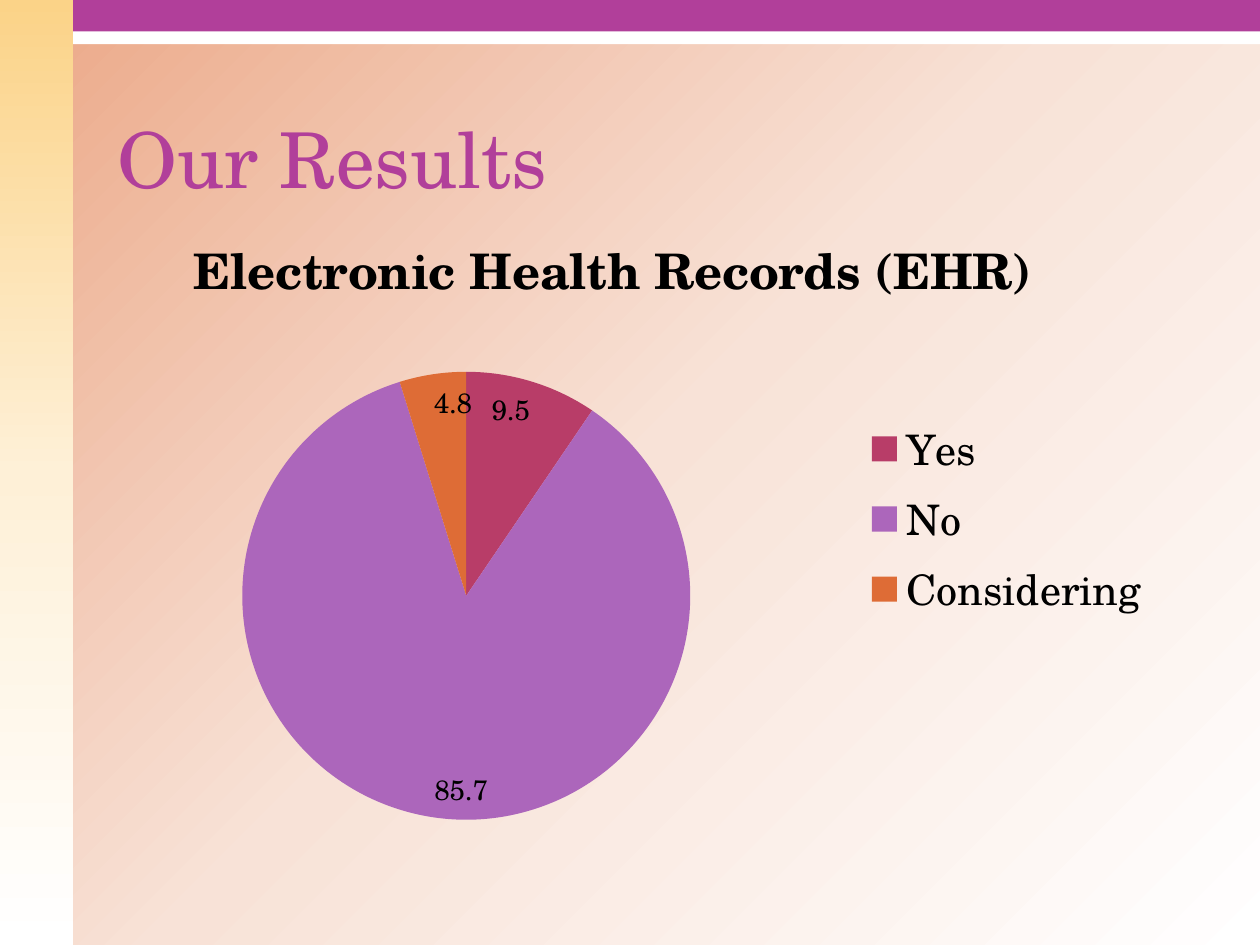
from copy import deepcopy

from lxml import etree
from pptx import Presentation
from pptx import util as u
from pptx.chart.data import CategoryChartData
from pptx.dml.color import RGBColor
from pptx.enum import chart as chart_enum, shapes, text
from pptx.oxml.ns import qn

FONT = "TeX Gyre Schola"
MAGENTA = "B13F9A"
SIDEBAR = 0.58


def color(value):
    return RGBColor.from_string(value)


def format_font(font, size, value, bold=False):
    font.name = FONT
    font.size = u.Pt(size)
    font.bold = bold
    font.color.rgb = color(value)


def fill_gradient(fill, element, colors, clockwise_angle):
    """Spread the colours evenly over a linear gradient inside element."""
    fill.gradient()
    fill.gradient_angle = 360 - clockwise_angle
    stop_list = next(element.iter(qn("a:gsLst")))
    while len(stop_list) < len(colors):
        stop_list.append(deepcopy(stop_list[0]))
    for index, (stop, value) in enumerate(zip(fill.gradient_stops, colors)):
        stop.color.rgb = color(value)
        stop.position = index / (len(colors) - 1)


def add_band(slide, left, top, width, height, colors):
    band = slide.shapes.add_shape(
        shapes.MSO_SHAPE.RECTANGLE,
        u.Inches(left), u.Inches(top), u.Inches(width), u.Inches(height))
    band.shadow.inherit = False
    band.line.fill.background()
    if len(colors) > 1:
        fill_gradient(band.fill, band._element, colors, 90)
    else:
        band.fill.solid()
        band.fill.fore_color.rgb = color(colors[0])


def set_title(slide, wording):
    title = slide.shapes.title
    title.left, title.top = u.Inches(0.83), u.Inches(0.42)
    title.width, title.height = u.Inches(8.75), u.Inches(1.25)
    frame = title.text_frame
    frame.text = wording
    frame.auto_size = text.MSO_AUTO_SIZE.NONE
    frame.vertical_anchor = text.MSO_ANCHOR.BOTTOM
    paragraph = frame.paragraphs[0]
    paragraph.alignment = text.PP_ALIGN.LEFT
    format_font(paragraph.runs[0].font, 44, MAGENTA)


def place_plot(chart, **fractions):
    """Fix the inner plot area, in fractions of the chart's size."""
    plot_area = chart._chartSpace.chart.plotArea
    for old in plot_area.findall(qn("c:layout")):
        plot_area.remove(old)
    layout = etree.Element(qn("c:layout"))
    manual = etree.SubElement(layout, qn("c:manualLayout"))
    settings = {"layoutTarget": "inner", "xMode": "edge", "yMode": "edge", **fractions}
    for name, value in settings.items():
        etree.SubElement(manual, qn(f"c:{name}")).set("val", str(value))
    plot_area.insert(0, layout)


def add_pie(slide, heading, answers):
    data = CategoryChartData()
    data.categories = [name for name, _, _ in answers]
    data.add_series("Series 1", [share for _, share, _ in answers])
    chart = slide.shapes.add_chart(
        chart_enum.XL_CHART_TYPE.PIE, u.Inches(SIDEBAR), u.Inches(1.58),
        u.Inches(8.67), u.Inches(5.08), data).chart
    format_font(chart.font, 10, "000000")

    # Heading and legend
    chart.has_title = True
    chart.chart_title.text_frame.text = heading
    heading_run = chart.chart_title.text_frame.paragraphs[0].runs[0]
    format_font(heading_run.font, 28, "000000", bold=True)
    chart.chart_title.include_in_layout = False
    chart.has_legend = True
    chart.legend.position = chart_enum.XL_LEGEND_POSITION.RIGHT
    chart.legend.include_in_layout = False
    format_font(chart.legend.font, 24, "000000")

    # Slices and their values
    plot = chart.plots[0]
    plot.vary_by_categories = True
    for index, (_, _, value) in enumerate(answers):
        fill = plot.series[0].points[index].format.fill
        fill.solid()
        fill.fore_color.rgb = color(value)
    plot.has_data_labels = True
    labels = plot.data_labels
    labels.show_value = True
    labels.show_percentage = False
    labels.position = chart_enum.XL_LABEL_POSITION.INSIDE_END
    format_font(labels.font, 16, "000000")
    place_plot(chart, x=0.15, y=0.27, w=0.42, h=0.7)


def main():
    presentation = Presentation()
    presentation.slide_width, presentation.slide_height = u.Inches(10), u.Inches(7.5)
    slide = presentation.slides.add_slide(presentation.slide_layouts[5])

    # Background, sidebar and top bands
    fill_gradient(slide.background.fill, slide._element,
                  ["EBA786", "F8E2D7", "FFFFFF"], 45)
    add_band(slide, 0, 0, 10, 0.35, ["FFFFFF"])
    add_band(slide, 0, 0, SIDEBAR, 7.5, ["FBD388", "FEF0D7", "FFFFFF"])
    add_band(slide, SIDEBAR, 0, 10 - SIDEBAR, 0.25, [MAGENTA])

    # Content
    set_title(slide, "Our Results")
    add_pie(slide, "Electronic Health Records (EHR) ", [
        ("Yes", 9.5, "B83D68"),
        ("No ", 85.7, "AC66BB"),
        ("Considering", 4.8, "DE6C36"),
    ])
    presentation.save("out.pptx")


if __name__ == "__main__":
    main()
